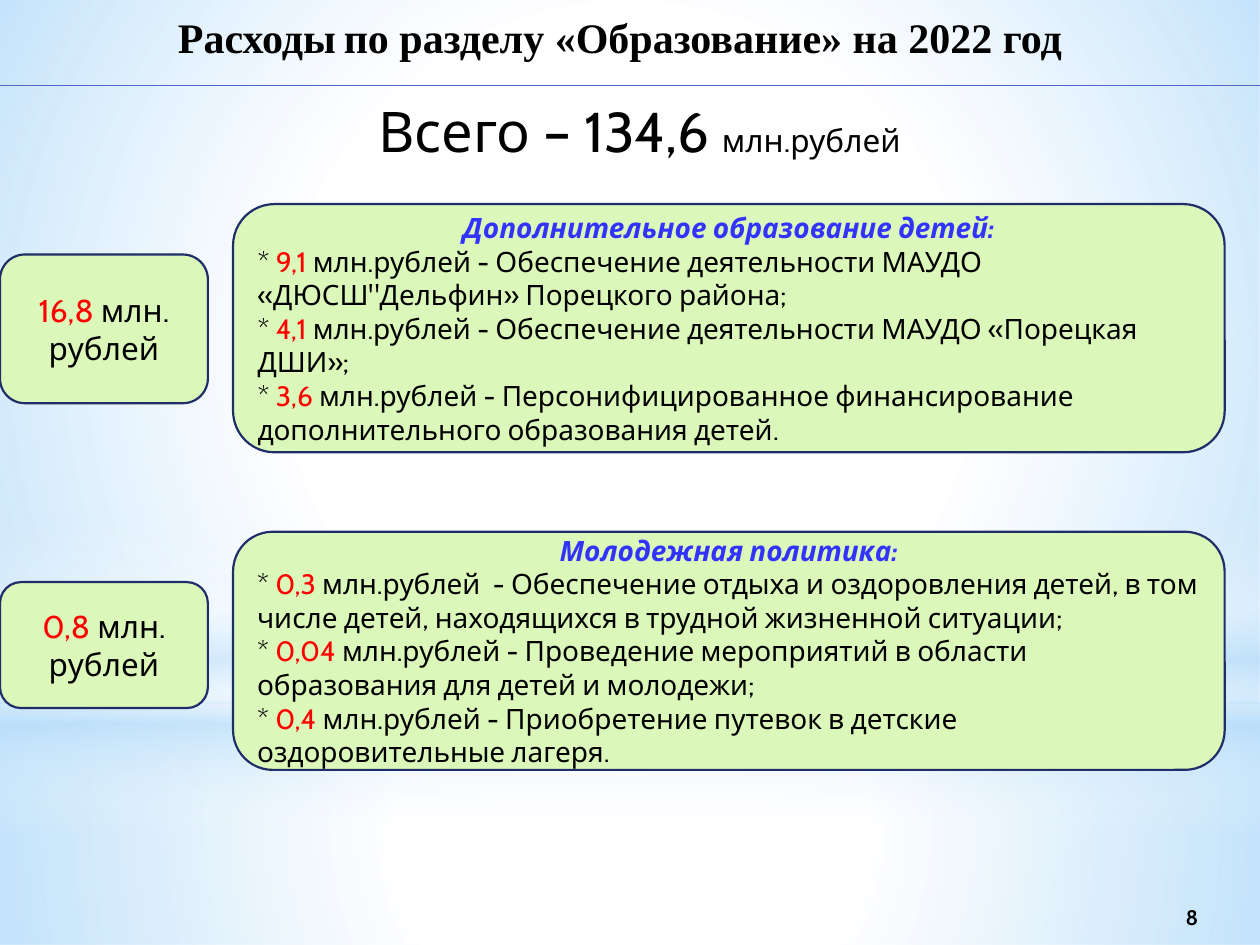
"""Build the slide on 2022 education spending."""
from pptx import Presentation
from pptx import oxml
from pptx import util as u
from pptx.dml import color
from pptx.enum import shapes, text
from pptx.oxml import ns

THEME = {
    "font": "Cabin", "title_font": "Times New Roman",
    "black": "000000", "red": "FF0000", "heading": "3333FF", "white": "FFFFFF",
    "sky": "B4DCFA", "card": "DCF7BA", "border": "1F2E69", "rule": "4E67C8",
    "title": 24, "total": 32, "label": 18, "body": 16, "number": 12,
}
WHITE, SKY = THEME["white"], THEME["sky"]
RECT, OVAL = shapes.MSO_SHAPE.RECTANGLE, shapes.MSO_SHAPE.OVAL
CENTER = text.PP_ALIGN.CENTER


def rgb(name):
    return color.RGBColor.from_string(THEME[name])


def write(p, runs, size, font="font", bold=False, italic=False, align=CENTER):
    p.alignment = align
    for words, hue, *own_size in runs:
        r = p.add_run()
        r.text = words
        r.font.name = THEME[font]
        r.font.size = u.Pt(THEME[own_size[0] if own_size else size])
        r.font.bold, r.font.italic = bold, italic
        r.font.color.rgb = rgb(hue)


prs = Presentation()
prs.slide_width, prs.slide_height = u.Pt(720), u.Pt(540)
s = prs.slides.add_slide(prs.slide_layouts[6])
s.background.fill.solid()
s.background.fill.fore_color.rgb = rgb("white")

radial = ('<a:path path="circle"><a:fillToRect l="50000" t="50000" '
          'r="50000" b="50000"/></a:path>')
linear = '<a:lin ang="5400000" scaled="0"/>'
backdrop = [
    (RECT, 401.76, 138.24, radial, [(0, WHITE, 91), (37, WHITE, 76), (100, SKY, 79)]),
    (RECT, 0, 401.76, radial, [(0, WHITE, 89), (48, WHITE, 62), (100, SKY, 79)]),
    (RECT, 296.64, 180, linear, [(0, WHITE, 0), (29, WHITE, 30), (45, SKY, 40),
                                 (55, WHITE, 26), (65, SKY, 60), (100, WHITE, 0)]),
    (OVAL, 126, 401.76, radial, [(0, WHITE, 100), (56, WHITE, 0)]),
]
for kind, top, height, direction, stops in backdrop:
    sp = s.shapes.add_shape(kind, 0, u.Pt(top), prs.slide_width, u.Pt(height))
    sp.shadow.inherit = False
    sp.line.fill.background()
    sp.fill.background()
    gs = "".join(
        f'<a:gs pos="{pos * 1000}"><a:srgbClr val="{hue}">'
        f'<a:alpha val="{alpha * 1000}"/></a:srgbClr></a:gs>'
        for pos, hue, alpha in stops)
    spPr = sp._element.spPr
    spPr.replace(spPr.find(ns.qn("a:noFill")), oxml.parse_xml(
        f'<a:gradFill {ns.nsdecls("a")} rotWithShape="1">'
        f'<a:gsLst>{gs}</a:gsLst>{direction}</a:gradFill>'))

rule = s.shapes.add_connector(shapes.MSO_CONNECTOR.STRAIGHT,
                              0, u.Pt(48.96), prs.slide_width, u.Pt(48.96))
rule.line.color.rgb = rgb("rule")
rule.line.width = u.Pt(0.75)
rule._element.spPr.append(oxml.parse_xml(f'<a:effectLst {ns.nsdecls("a")}/>'))

TOP, MIDDLE = text.MSO_ANCHOR.TOP, text.MSO_ANCHOR.MIDDLE
labels = [
    ((20.16, 2.88, 668.16, 43.2), TOP, "title", "title_font", True,
     [("Расходы", "black"), (" ", "black", "label"),
      ("по разделу «Образование» на 2022 год", "black")]),
    ((161.28, 54.72, 408.24, 39.6), MIDDLE, "total", "font", False,
     [("Всего – 134,6 ", "black"), ("млн.рублей", "black", "label")]),
    ((641.52, 509.76, 79.2, 28.8), MIDDLE, "number", "font", True, [("8", "black")]),
]
for box, anchor, size, font, bold, runs in labels:
    tf = s.shapes.add_textbox(*map(u.Pt, box)).text_frame
    tf.word_wrap = True
    tf.vertical_anchor = anchor
    write(tf.paragraphs[0], runs, size, font, bold)

sections = [
    (116.64, 141.84, 145.44, 84.96, "16,8 ", "Дополнительное образование детей:", [
        ("9,1 ", "млн.рублей - Обеспечение деятельности МАУДО "
                 "«ДЮСШ\"Дельфин» Порецкого района;"),
        ("4,1 ", "млн.рублей - Обеспечение деятельности МАУДО «Порецкая ДШИ»;"),
        ("3,6 ", "млн.рублей - Персонифицированное финансирование "
                 "дополнительного образования детей."),
    ]),
    (303.84, 136.08, 332.64, 72, "0,8 ", "Молодежная политика:", [
        ("0,3", " млн.рублей  - Обеспечение отдыха и оздоровления детей, в том "
                "числе детей, находящихся в трудной жизненной ситуации;"),
        ("0,04 ", "млн.рублей - Проведение мероприятий в области "
                  "образования для детей и молодежи;"),
        ("0,4 ", "млн.рублей - Приобретение путевок в детские "
                 "оздоровительные лагеря."),
    ]),
]
for top, height, sum_top, sum_height, total, heading, items in sections:
    frames = []
    for box in ((0, sum_top, 118.8, sum_height), (133.2, top, 566.64, height)):
        sp = s.shapes.add_shape(shapes.MSO_SHAPE.ROUNDED_RECTANGLE, *map(u.Pt, box))
        sp.shadow.inherit = False
        sp.fill.solid()
        sp.fill.fore_color.rgb = rgb("card")
        sp.line.color.rgb = rgb("border")
        sp.line.width = u.Pt(1.25)
        sp.text_frame.word_wrap = True
        sp.text_frame.vertical_anchor = MIDDLE
        frames.append(sp.text_frame)
    sum_tf, tf = frames
    write(sum_tf.paragraphs[0], [(total, "red"), ("млн. рублей", "black")], "label")
    write(tf.paragraphs[0], [(heading, "heading")], "body", bold=True, italic=True)
    for amount, purpose in items:
        write(tf.add_paragraph(),
              [("* ", "black"), (amount, "red"), (purpose, "black")],
              "body", align=text.PP_ALIGN.LEFT)

prs.save("out.pptx")
